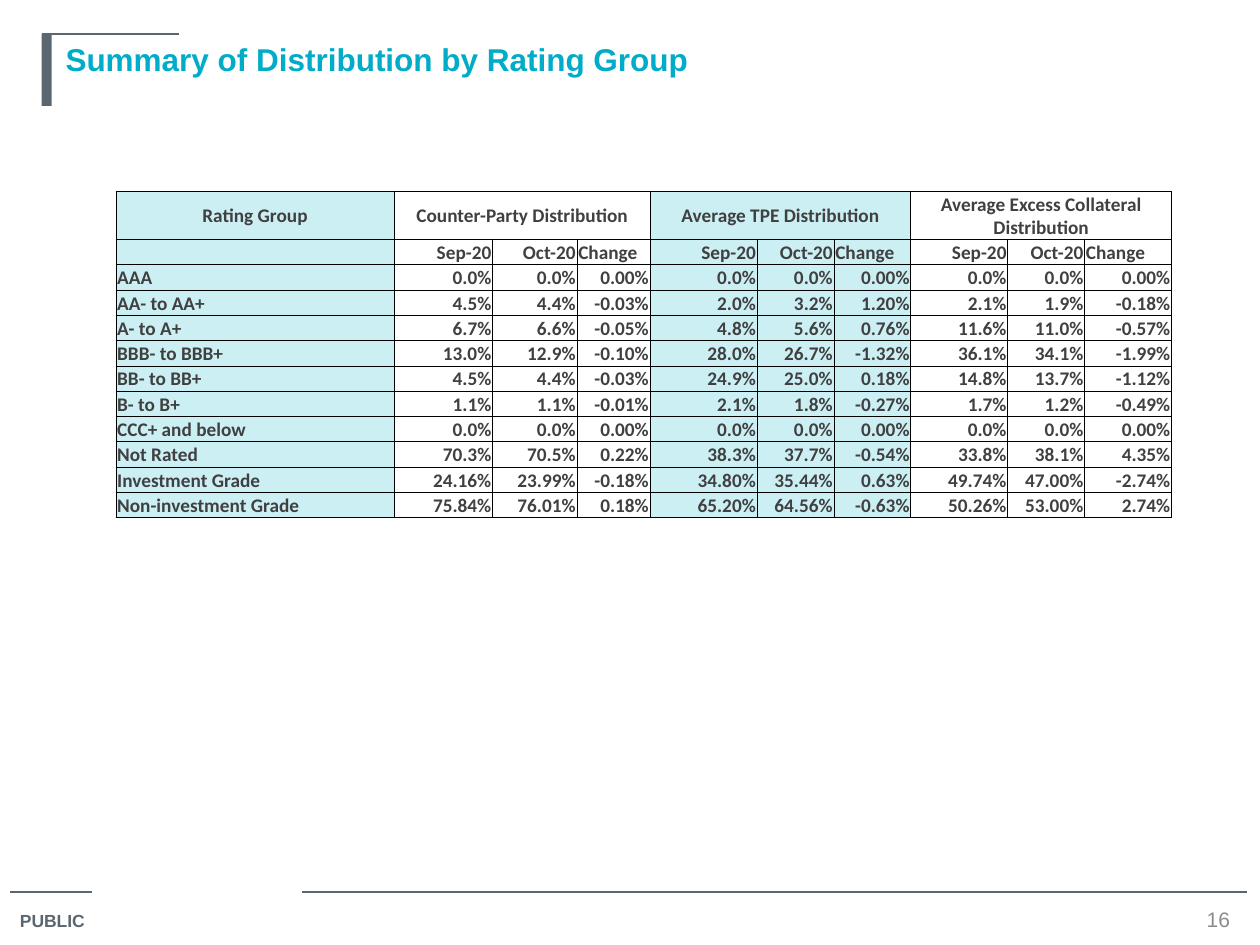
import lxml.etree
import pptx
import pptx.dml.color
import pptx.enum.shapes
import pptx.enum.text
import pptx.oxml.ns
import pptx.util

WIDE, HIGH = pptx.util.Inches(10), pptx.util.Inches(7.5)
COLORS = {"slate": "5B6770", "teal": "00ACC8", "gray": "8C8C8C",
          "ink": "404040", "tint": "CCEFF4", "black": "000000"}
ALIGN = pptx.enum.text.PP_ALIGN
ANCHOR = pptx.enum.text.MSO_ANCHOR

COLS = [22.1, 7.8, 6.7, 5.8, 8.5, 6.1, 6.1, 7.7, 6.1, 6.9]
TOTAL, HEAD = 34.53, 5.07
TINTED = {0, 4, 5, 6}
GROUPS = ["Counter-Party Distribution", "Average TPE Distribution",
          "Average Excess Collateral Distribution"]
DATES = ["Sep-20", "Oct-20", "Change"]
RATINGS = {
    "AAA": "0.0% 0.0% 0.00% 0.0% 0.0% 0.00% 0.0% 0.0% 0.00%",
    "AA- to AA+": "4.5% 4.4% -0.03% 2.0% 3.2% 1.20% 2.1% 1.9% -0.18%",
    "A- to A+": "6.7% 6.6% -0.05% 4.8% 5.6% 0.76% 11.6% 11.0% -0.57%",
    "BBB- to BBB+": "13.0% 12.9% -0.10% 28.0% 26.7% -1.32% 36.1% 34.1% -1.99%",
    "BB- to BB+": "4.5% 4.4% -0.03% 24.9% 25.0% 0.18% 14.8% 13.7% -1.12%",
    "B- to B+": "1.1% 1.1% -0.01% 2.1% 1.8% -0.27% 1.7% 1.2% -0.49%",
    "CCC+ and below": "0.0% 0.0% 0.00% 0.0% 0.0% 0.00% 0.0% 0.0% 0.00%",
    "Not Rated": "70.3% 70.5% 0.22% 38.3% 37.7% -0.54% 33.8% 38.1% 4.35%",
    "Investment Grade":
        "24.16% 23.99% -0.18% 34.80% 35.44% 0.63% 49.74% 47.00% -2.74%",
    "Non-investment Grade":
        "75.84% 76.01% 0.18% 65.20% 64.56% -0.63% 50.26% 53.00% 2.74%",
}


def across(share):
    """Percent of the slide's width."""
    return round(WIDE * share / 100)


def down(share):
    """Percent of the slide's height."""
    return round(HIGH * share / 100)


def area(left, top, width, height):
    return across(left), down(top), across(width), down(height)


def tone(name):
    return pptx.dml.color.RGBColor.from_string(COLORS[name])


def write(frame, text, size=11, font="Calibri", color="ink", bold=True,
          align=ALIGN.LEFT, anchor=ANCHOR.TOP):
    frame.word_wrap = True
    frame.vertical_anchor = anchor
    line = frame.paragraphs[0]
    line.alignment = align
    run = line.add_run()
    run.text = text
    run.font.size = pptx.util.Pt(size)
    run.font.name = font
    run.font.bold = bold
    run.font.color.rgb = tone(color)


def add_title(slide, text):
    title = slide.shapes.title
    title.left, title.top, title.width, title.height = area(4.2, 3.6, 92.5, 16.67)
    title.text_frame.auto_size = pptx.enum.text.MSO_AUTO_SIZE.NONE
    write(title.text_frame, text, size=18, font="Arial", color="teal")


def add_label(slide, box, text, **form):
    frame = slide.shapes.add_textbox(*area(*box)).text_frame
    write(frame, text, font="Arial", **form)


def add_rule(slide, start, end, top):
    rule = slide.shapes.add_connector(
        pptx.enum.shapes.MSO_CONNECTOR.STRAIGHT,
        across(start), down(top), across(end), down(top))
    rule.line.color.rgb = tone("slate")
    rule.line.width = pptx.util.Pt(0.75)
    lxml.etree.SubElement(rule._element.spPr, pptx.oxml.ns.qn("a:effectLst"))


def add_bar(slide, box):
    bar = slide.shapes.add_shape(
        pptx.enum.shapes.MSO_SHAPE.RECTANGLE, *area(*box))
    bar.shadow.inherit = False
    bar.fill.solid()
    bar.fill.fore_color.rgb = tone("slate")
    bar.line.fill.background()


def add_edges(cell):
    name = pptx.oxml.ns.qn
    props = cell._tc.get_or_add_tcPr()
    for side in ("a:lnL", "a:lnR", "a:lnT", "a:lnB"):
        edge = lxml.etree.SubElement(
            props, name(side), w=str(pptx.util.Pt(0.5)))
        fill = lxml.etree.SubElement(edge, name("a:solidFill"))
        lxml.etree.SubElement(fill, name("a:srgbClr"), val=COLORS["black"])


def style(cell, col):
    cell.margin_left = cell.margin_right = pptx.util.Inches(0.01)
    cell.margin_top, cell.margin_bottom = pptx.util.Inches(0.01), 0
    add_edges(cell)
    if col in TINTED:
        cell.fill.solid()
        cell.fill.fore_color.rgb = tone("tint")
    else:
        cell.fill.background()


def fill_cell(cell, text, **form):
    if text:
        anchor = form.pop("anchor", ANCHOR.BOTTOM)
        write(cell.text_frame, text, **form)
        cell.vertical_anchor = anchor
    else:
        end = cell.text_frame.paragraphs[0]._p.get_or_add_endParaRPr()
        end.set("sz", "1100")


def add_grid(slide):
    rows = [[""] + DATES * len(GROUPS)]
    rows += [[name] + values.split() for name, values in RATINGS.items()]
    grid = slide.shapes.add_table(
        len(rows) + 1, len(COLS), *area(9.2, 20.27, sum(COLS), TOTAL)).table
    grid.first_row = grid.horz_banding = False
    for col, share in zip(grid.columns, COLS):
        col.width = across(share)
    for row in grid.rows:
        row.height = down((TOTAL - HEAD) / len(rows))
    grid.rows[0].height = down(HEAD)

    for spot, cell in enumerate(grid.iter_cells()):
        style(cell, spot % len(COLS))

    fill_cell(grid.cell(0, 0), "Rating Group", align=ALIGN.CENTER,
              anchor=ANCHOR.MIDDLE)
    for num, group in enumerate(GROUPS):
        first = 1 + num * len(DATES)
        cell = grid.cell(0, first)
        cell.merge(grid.cell(0, first + len(DATES) - 1))
        last = num == len(GROUPS) - 1
        fill_cell(cell, group, align=ALIGN.CENTER,
                  anchor=ANCHOR.BOTTOM if last else ANCHOR.MIDDLE)
    for r, row in enumerate(rows, 1):
        for c, text in enumerate(row):
            left = c == 0 or text == "Change"
            fill_cell(grid.cell(r, c), text,
                      align=ALIGN.LEFT if left else ALIGN.RIGHT)


def main():
    deck = pptx.Presentation()
    deck.slide_width, deck.slide_height = WIDE, HIGH
    slide = deck.slides.add_slide(deck.slide_layouts[5])
    add_rule(slide, 0.8, 7.3, 94.4)
    add_rule(slide, 24, 99, 94.4)
    add_label(slide, (0.6, 95.6, 7.7, 3.73), "PUBLIC", size=10, color="slate")
    add_bar(slide, (3.3, 3.6, 0.8, 7.6))
    add_rule(slide, 3.3, 14.2, 3.6)
    add_title(slide, "Summary of Distribution by Rating Group")
    add_label(slide, (94.2, 95.73, 5, 3.07), "16", size=12, color="gray",
              bold=False, align=ALIGN.CENTER, anchor=ANCHOR.MIDDLE)
    add_grid(slide)
    deck.save("out.pptx")


if __name__ == "__main__":
    main()
